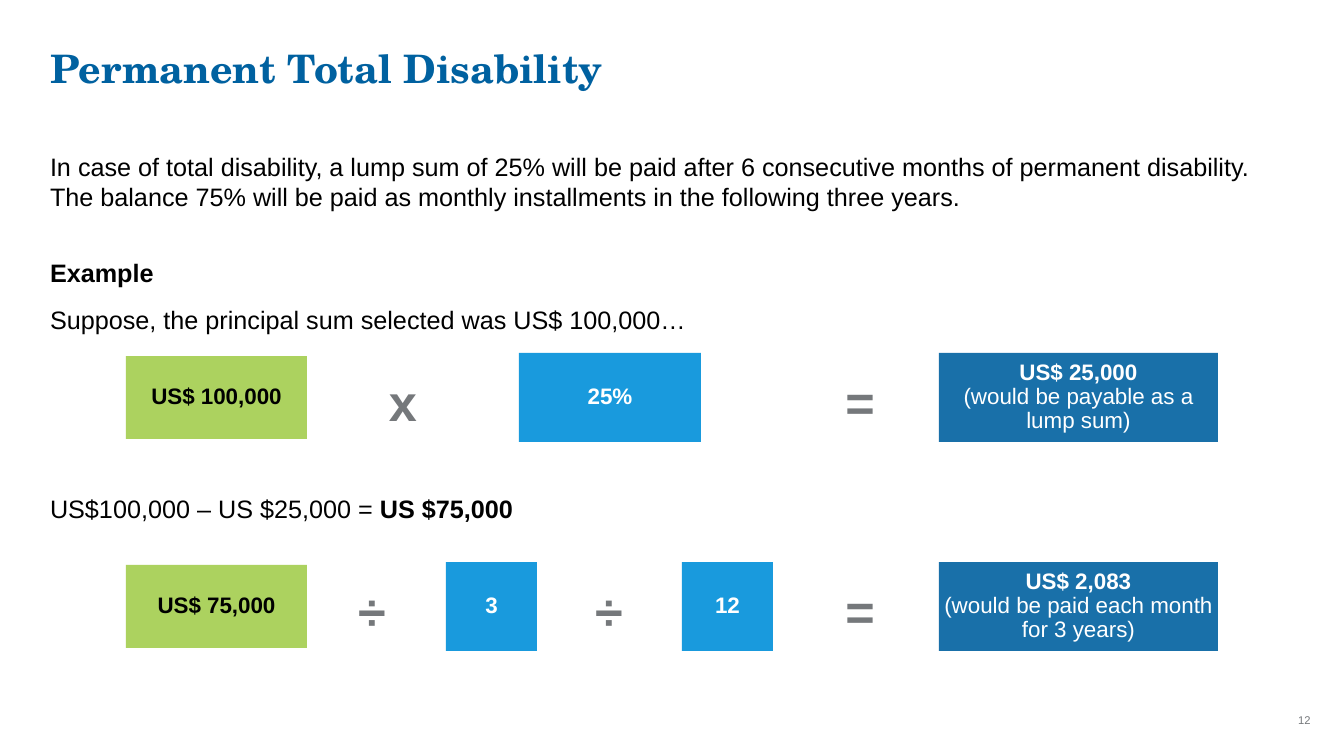
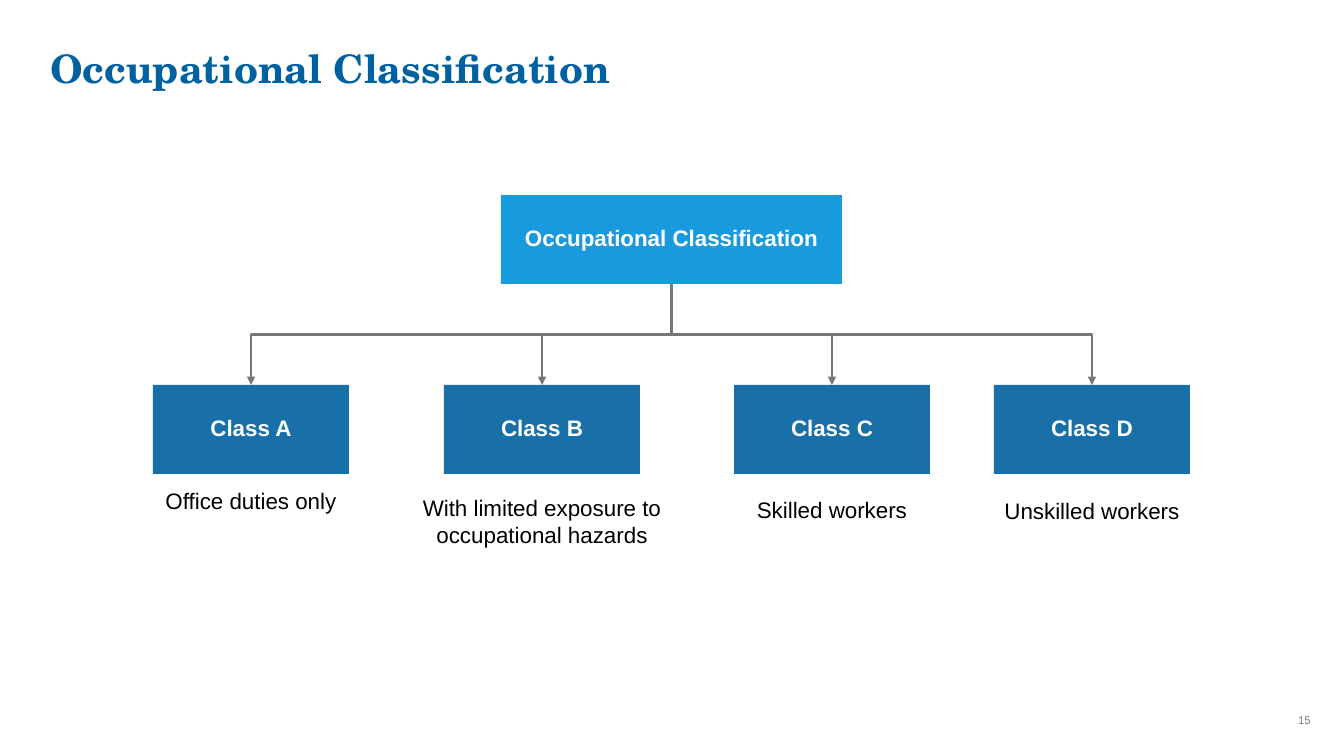
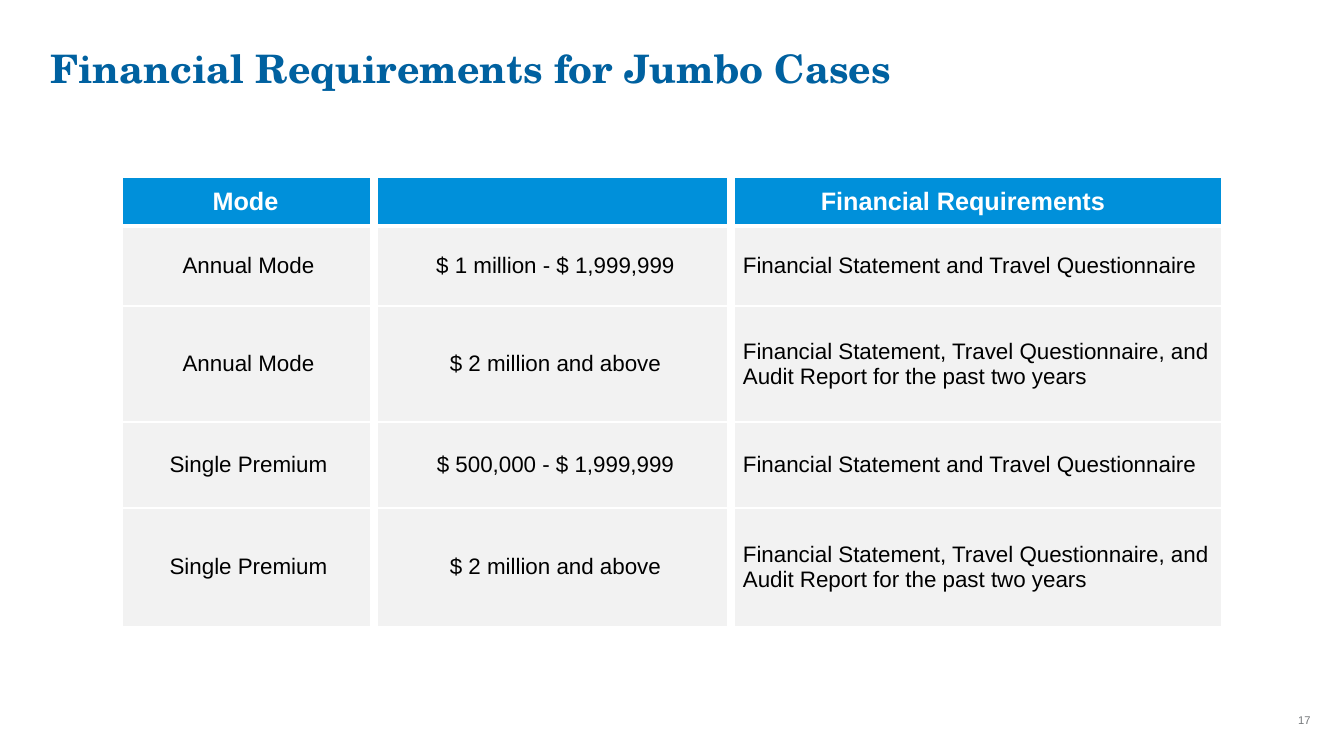
from lxml.etree import SubElement
from pptx import Presentation
from pptx.dml.color import RGBColor
from pptx.enum.shapes import MSO_CONNECTOR, MSO_SHAPE
from pptx.enum.text import MSO_ANCHOR, PP_ALIGN
from pptx.oxml.ns import qn
from pptx.util import Pt

EMU_PER_PX = 914400 / 100.8
SLIDE_WIDTH, SLIDE_HEIGHT = 1344, 756
MARGIN = 50

BLUE = RGBColor(0x00, 0x61, 0xA0)
SKY = RGBColor(0x00, 0x90, 0xDA)
GREEN = RGBColor(0xA4, 0xCE, 0x4E)
GRAY = RGBColor(0x75, 0x78, 0x7B)
PALE = RGBColor(0xF2, 0xF2, 0xF2)
BLACK = RGBColor(0x00, 0x00, 0x00)
WHITE = RGBColor(0xFF, 0xFF, 0xFF)

BODY_FONT = "Arial"
TITLE_FONT = "TeX Gyre Schola"
PLAIN_STYLE = "{2D5ABB26-0587-4C30-8999-92F81FD0307C}"
BOX_HEIGHT = 89

# Paragraphs are lists of (text, bold) runs.
# Statements: top, height, paragraph
STATEMENTS = [
    (151, 80, [("In case of total disability, a lump sum of 25% will be paid after 6 consecutive "
                "months of permanent disability. The balance 75% will be paid as monthly "
                "installments in the following three years.", False)]),
    (257, 30, [("Example", True)]),
    (304, 30, [("Suppose, the principal sum selected was US$ 100,000…", False)]),
    (493, 30, [("US$100,000 – US $25,000 = ", False), ("US $75,000", True)]),
]

# Equations: top, boxes (left, width, fill, paragraphs), operators (center, sign)
EQUATIONS = [
    (353,
     [(126, 181, GREEN, [[("US$ 100,000", True)]]),
      (519, 182, SKY, [[("25%", True)]]),
      (939, 279, BLUE, [[("US$ 25,000", True)],
                        [("(would be payable as a lump sum)", False)]])],
     [(403, "x"), (860, "=")]),
    (562,
     [(126, 181, GREEN, [[("US$ 75,000", True)]]),
      (446, 91, SKY, [[("3", True)]]),
      (682, 91, SKY, [[("12", True)]]),
      (939, 279, BLUE, [[("US$ 2,083", True)],
                        [("(would be paid each month for 3 years)", False)]])],
     [(372, "÷"), (609, "÷"), (860, "=")]),
]

# Classes: box left, name, description top, description
CLASSES = [
    (153, "Class A", 482, "Office duties only"),
    (444, "Class B", 489, "With limited exposure to occupational hazards"),
    (734, "Class C", 491, "Skilled workers"),
    (994, "Class D", 492, "Unskilled workers"),
]
CLASS_TOP, CLASS_WIDTH, DESCRIPTION_WIDTH = 385, 196, 260

STATEMENT_ONLY = "Financial Statement and Travel Questionnaire"
WITH_AUDIT = "Financial Statement, Travel Questionnaire, and Audit Report for the past two years"
REQUIREMENTS = [
    ("Mode", "", "Financial Requirements"),
    ("Annual Mode", "$ 1 million - $ 1,999,999", STATEMENT_ONLY),
    ("Annual Mode", "$ 2 million and above", WITH_AUDIT),
    ("Single Premium", "$ 500,000 - $ 1,999,999", STATEMENT_ONLY),
    ("Single Premium", "$ 2 million and above", WITH_AUDIT),
]
COLUMN_WIDTHS = [251, 357, 490]
ROW_HEIGHTS = [48, 80, 116, 86, 118]
HEADER_INSETS = [(0, 6), (0, 0), (0, 26)]
BODY_INSETS = [(6, 6), (12, 6), (12, 6)]


def px(*lengths):
    """Turn pixel lengths into a list of EMU."""
    return [round(length * EMU_PER_PX) for length in lengths]


def write_text(frame, paragraphs, size=16, color=BLACK, font=BODY_FONT,
               align=PP_ALIGN.LEFT, spacing=None):
    """Fill a text frame with paragraphs, each a list of (text, bold) runs."""
    for index, runs in enumerate(paragraphs):
        paragraph = frame.add_paragraph() if index else frame.paragraphs[0]
        paragraph.alignment = align
        if spacing:
            paragraph.line_spacing = spacing
        for text, bold in runs:
            run = paragraph.add_run()
            run.text = text
            run.font.size = Pt(size)
            run.font.bold = bold
            run.font.name = font
            run.font.color.rgb = color


def set_frame(frame, inset_x=0, inset_y=0, anchor=MSO_ANCHOR.TOP):
    frame.word_wrap = True
    frame.margin_left = frame.margin_right = px(inset_x)[0]
    frame.margin_top = frame.margin_bottom = px(inset_y)[0]
    frame.vertical_anchor = anchor


def add_text(slide, left, top, width, height, paragraphs, inset_x=0, inset_y=0,
             anchor=MSO_ANCHOR.TOP, **text_format):
    frame = slide.shapes.add_textbox(*px(left, top, width, height)).text_frame
    set_frame(frame, inset_x, inset_y, anchor)
    write_text(frame, paragraphs, **text_format)


def add_box(slide, left, top, width, height, fill, paragraphs):
    """Add a rectangle at 90% opacity with centred text."""
    shape = slide.shapes.add_shape(MSO_SHAPE.RECTANGLE, *px(left, top, width, height))
    shape.shadow.inherit = False
    shape.line.fill.background()
    shape.fill.solid()
    shape.fill.fore_color.rgb = fill
    color = shape._element.spPr.find(qn("a:solidFill")).find(qn("a:srgbClr"))
    SubElement(color, qn("a:alpha"), val="90000")
    set_frame(shape.text_frame, anchor=MSO_ANCHOR.MIDDLE)
    write_text(shape.text_frame, paragraphs, color=BLACK if fill == GREEN else WHITE,
               align=PP_ALIGN.CENTER, spacing=0.9)
    return shape


def add_elbow(slide, parent, child):
    """Join the bottom of parent to the top of child, leaving and arriving vertically."""
    start_x, start_y = parent.left + parent.width // 2, parent.top + parent.height
    end_x, end_y = child.left + child.width // 2, child.top
    connector = slide.shapes.add_connector(MSO_CONNECTOR.ELBOW, start_x, start_y, end_x, end_y)
    connector.begin_connect(parent, 2)
    connector.end_connect(child, 0)
    connector.line.color.rgb = GRAY
    connector.line.width = Pt(2)
    SubElement(connector.line._get_or_add_ln(), qn("a:tailEnd"), type="triangle")
    properties = connector._element.spPr
    SubElement(properties, qn("a:effectLst"))

    # The route is a horizontal elbow turned by a quarter about its centre.
    run, drop = abs(end_x - start_x), end_y - start_y
    connector.left = (start_x + end_x - drop) // 2
    connector.top = (start_y + end_y - run) // 2
    connector.width, connector.height = drop, run
    transform = properties.find(qn("a:xfrm"))
    goes_right = end_x > start_x
    transform.set("rot", "16200000" if goes_right else "5400000")
    transform.set("flipH", "1" if goes_right else "0")


def set_borders(cell, **widths):
    """Draw white cell borders; keys are lnL, lnR, lnT, lnB in points."""
    properties = cell._tc.get_or_add_tcPr()
    for position, side in enumerate(side for side in ("lnL", "lnR", "lnT", "lnB")
                                    if side in widths):
        line = SubElement(properties, qn(f"a:{side}"), w=str(Pt(widths[side])))
        fill = SubElement(line, qn("a:solidFill"))
        SubElement(fill, qn("a:srgbClr"), val=str(WHITE))
        properties.insert(position, line)


def add_page(presentation, title, number):
    slide = presentation.slides.add_slide(presentation.slide_layouts[6])
    add_text(slide, MARGIN, 50, 1042, 80, [[(title, True)]],
             size=28, color=BLUE, font=TITLE_FONT, spacing=0.9)
    add_text(slide, 1265, 708, 79, 25, [[(str(number), False)]], inset_x=10, inset_y=5,
             anchor=MSO_ANCHOR.MIDDLE, size=8, color=GRAY, align=PP_ALIGN.CENTER)
    return slide


def build_disability(presentation):
    slide = add_page(presentation, "Permanent Total Disability", 12)
    for top, height, paragraph in STATEMENTS:
        add_text(slide, MARGIN, top, 1239, height, [paragraph], size=18)
    for top, boxes, operators in EQUATIONS:
        for left, width, fill, paragraphs in boxes:
            trim = 3 if fill == GREEN else 0
            add_box(slide, left, top + trim, width, BOX_HEIGHT - 2 * trim, fill, paragraphs)
        for center, sign in operators:
            add_text(slide, center - 33, top + 19, 66, 58, [[(sign, True)]], size=36,
                     color=GRAY, align=PP_ALIGN.CENTER, anchor=MSO_ANCHOR.MIDDLE)


def build_classification(presentation):
    slide = add_page(presentation, "Occupational Classification", 15)
    root = add_box(slide, 501, 195, 341, BOX_HEIGHT, SKY,
                   [[("Occupational Classification", True)]])
    for left, name, description_top, description in CLASSES:
        box = add_box(slide, left, CLASS_TOP, CLASS_WIDTH, BOX_HEIGHT, BLUE, [[(name, True)]])
        add_elbow(slide, root, box)
        add_text(slide, left + (CLASS_WIDTH - DESCRIPTION_WIDTH) // 2, description_top,
                 DESCRIPTION_WIDTH, 37, [[(description, False)]],
                 inset_x=10, inset_y=5, align=PP_ALIGN.CENTER)


def build_requirements(presentation):
    slide = add_page(presentation, "Financial Requirements for Jumbo Cases", 17)
    frame = slide.shapes.add_table(len(ROW_HEIGHTS), len(COLUMN_WIDTHS), *px(
        123, 178, sum(COLUMN_WIDTHS), sum(ROW_HEIGHTS)))
    table = frame.table
    table.first_row = table.horz_banding = False
    table._tbl.tblPr.find(qn("a:tableStyleId")).text = PLAIN_STYLE
    for column, width in zip(table.columns, px(*COLUMN_WIDTHS)):
        column.width = width
    for row, height in zip(table.rows, px(*ROW_HEIGHTS)):
        row.height = height

    last_row, last_column = len(ROW_HEIGHTS) - 1, len(COLUMN_WIDTHS) - 1
    for row_index, texts in enumerate(REQUIREMENTS):
        header = row_index == 0
        for column_index, text in enumerate(texts):
            cell = table.cell(row_index, column_index)
            insets = (HEADER_INSETS if header else BODY_INSETS)[column_index]
            cell.margin_left, cell.margin_right = px(*insets)
            cell.margin_top = cell.margin_bottom = px(0 if header else 3)[0]
            cell.vertical_anchor = MSO_ANCHOR.MIDDLE
            cell.fill.solid()
            cell.fill.fore_color.rgb = SKY if header else PALE
            borders = {}
            if column_index > 0:
                borders["lnL"] = 6
            if column_index < last_column:
                borders["lnR"] = 6
            if row_index > 0:
                borders["lnT"] = 3 if row_index == 1 else 2.25
            if row_index < last_row:
                borders["lnB"] = 3 if header else 2.25
            set_borders(cell, **borders)
            left_aligned = column_index == last_column and not header
            if text:
                write_text(cell.text_frame, [[(text, header)]], size=18 if header else 16,
                           color=WHITE if header else BLACK,
                           align=PP_ALIGN.LEFT if left_aligned else PP_ALIGN.CENTER)


def main():
    presentation = Presentation()
    presentation.slide_width, presentation.slide_height = px(SLIDE_WIDTH, SLIDE_HEIGHT)
    build_disability(presentation)
    build_classification(presentation)
    build_requirements(presentation)
    presentation.save("out.pptx")


if __name__ == "__main__":
    main()
